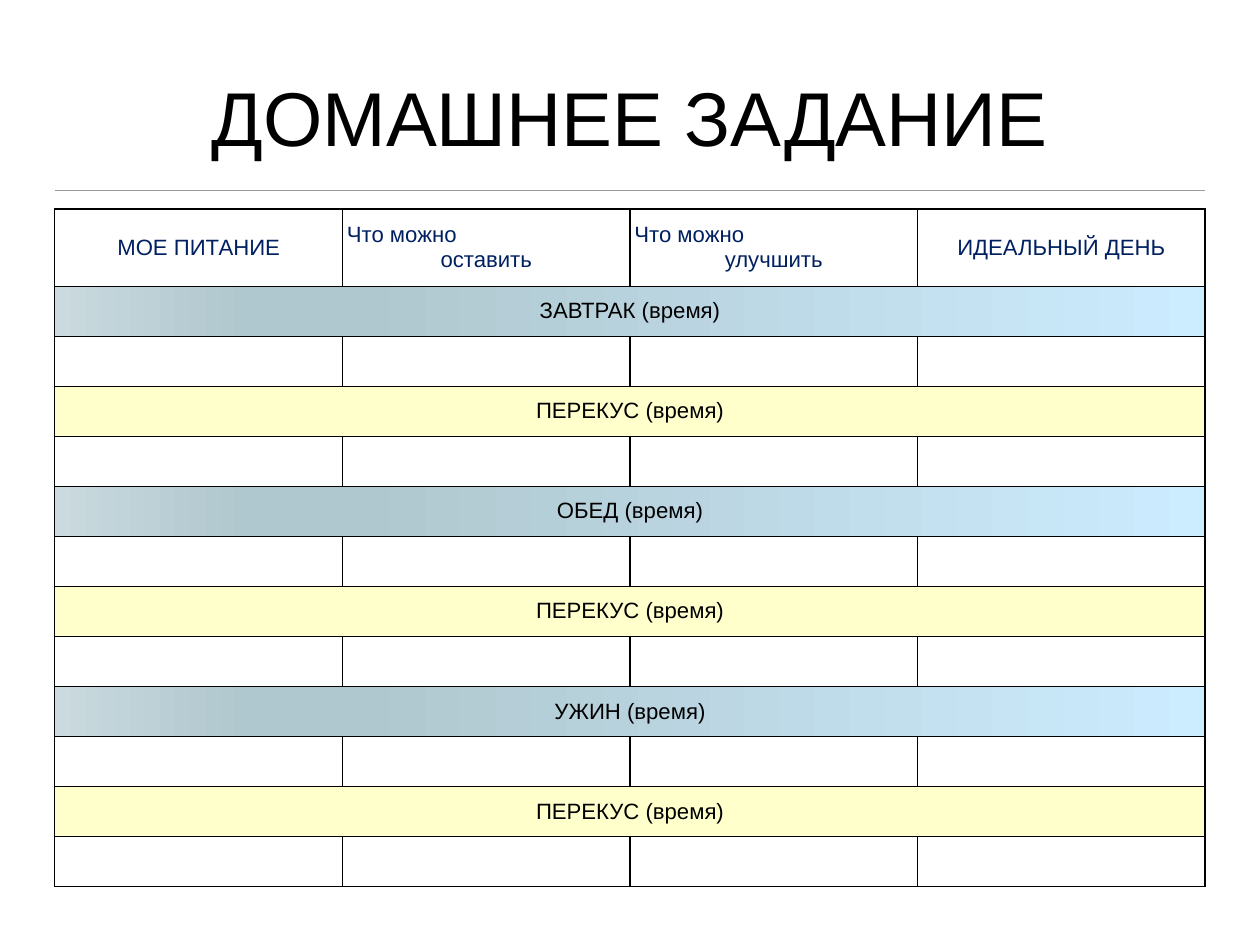
"""Build the homework slide: a title, a rule and a four-column meal diary table."""
import lxml.etree
import pptx
import pptx.dml.color
import pptx.enum.shapes
import pptx.enum.text
import pptx.oxml
import pptx.oxml.ns
import pptx.util

THEME = {
    "font": "Arial", "title_size": 62, "table_size": 18,
    "text": "000000", "heading": "002060", "rule": "9A9A9A", "border": "000000",
    "paper": "FFFFFF", "snack": "FFFFCC",
    "meal": [(0, "CCECFF"), (74, "AFC7CE"), (83, "AFC7CE"), (100, "CADADE")],
}
ALIGN = pptx.enum.text.PP_ALIGN
ANCHOR = pptx.enum.text.MSO_ANCHOR
NAMESPACE = pptx.oxml.ns.nsdecls("a")
Inches = pptx.util.Inches
color = pptx.dml.color.RGBColor.from_string


def write(frame, text, size=THEME["table_size"], ink=THEME["text"], alignments=(ALIGN.CENTER,)):
    """Fill a text frame, one paragraph per line of text."""
    frame.word_wrap = True
    frame.text = text
    for paragraph, alignment in zip(frame.paragraphs, alignments):
        paragraph.alignment = alignment
        for run in paragraph.runs:
            run.font.name = THEME["font"]
            run.font.size = pptx.util.Pt(size)
            run.font.color.rgb = color(ink)


presentation = pptx.Presentation()
presentation.slide_width = Inches(14.22)
presentation.slide_height = Inches(10.67)
slide = presentation.slides.add_slide(presentation.slide_layouts[6])

margin = Inches(0.62)
content_width = presentation.slide_width - 2 * margin

rule_top = Inches(2.15)
rule = slide.shapes.add_connector(
    pptx.enum.shapes.MSO_CONNECTOR.STRAIGHT, margin, rule_top, margin + content_width, rule_top)
rule.line.color.rgb = color(THEME["rule"])
rule.line.width = pptx.util.Pt(1)
lxml.etree.SubElement(rule._element.spPr, pptx.oxml.ns.qn("a:effectLst"))

title = slide.shapes.add_textbox(margin, Inches(0.36), content_width, Inches(1.53))
title_frame = title.text_frame
title_frame.vertical_anchor = ANCHOR.BOTTOM
title_frame.margin_left = title_frame.margin_right = Inches(0.06)
title_frame.margin_top = title_frame.margin_bottom = Inches(0.06)
write(title_frame, "ДОМАШНЕЕ ЗАДАНИЕ", size=THEME["title_size"])

headings = ["МОЕ ПИТАНИЕ", "Что можно\nоставить", "Что можно\nулучшить", "ИДЕАЛЬНЫЙ ДЕНЬ"]
meals = ["ЗАВТРАК", "ПЕРЕКУС", "ОБЕД", "ПЕРЕКУС", "УЖИН", "ПЕРЕКУС"]
row_count = 1 + 2 * len(meals)
table_height = Inches(7.65)
heading_height = Inches(0.87)
table = slide.shapes.add_table(
    row_count, len(headings), margin, Inches(2.36), content_width, table_height).table
table.first_row = table.horz_banding = False
for column in table.columns:
    column.width = content_width // len(headings)
for row in table.rows:
    row.height = (table_height - heading_height) // (row_count - 1)
table.rows[0].height = heading_height

for cell in table.iter_cells():
    cell.vertical_anchor = ANCHOR.MIDDLE
    cell.margin_left = cell.margin_right = Inches(0.05)
    cell.margin_top = cell.margin_bottom = Inches(0.05)
    for side in "LRTB":
        cell._tc.get_or_add_tcPr().append(pptx.oxml.parse_xml(
            f'<a:ln{side} {NAMESPACE} w="12700"><a:solidFill>'
            f'<a:srgbClr val="{THEME["border"]}"/></a:solidFill></a:ln{side}>'))
    cell.fill.solid()
    cell.fill.fore_color.rgb = color(THEME["paper"])

for index, heading in enumerate(headings):
    alignments = (ALIGN.LEFT, ALIGN.CENTER) if "\n" in heading else (ALIGN.CENTER,)
    write(table.cell(0, index).text_frame, heading, ink=THEME["heading"], alignments=alignments)

stops = "".join(
    f'<a:gs pos="{share * 1000}"><a:srgbClr val="{shade}"/></a:gs>' for share, shade in THEME["meal"])
for index, meal in enumerate(meals):
    row_index = 1 + 2 * index
    band = table.cell(row_index, 0)
    band.merge(table.cell(row_index, len(headings) - 1))
    write(band.text_frame, f"{meal} (время)")
    if meal == "ПЕРЕКУС":
        band.fill.fore_color.rgb = color(THEME["snack"])
    else:
        band.fill.background()
        properties = band._tc.tcPr
        properties.replace(properties.find(pptx.oxml.ns.qn("a:noFill")), pptx.oxml.parse_xml(
            f'<a:gradFill {NAMESPACE}><a:gsLst>{stops}</a:gsLst>'
            '<a:lin ang="10800000" scaled="0"/></a:gradFill>'))

presentation.save("out.pptx")
